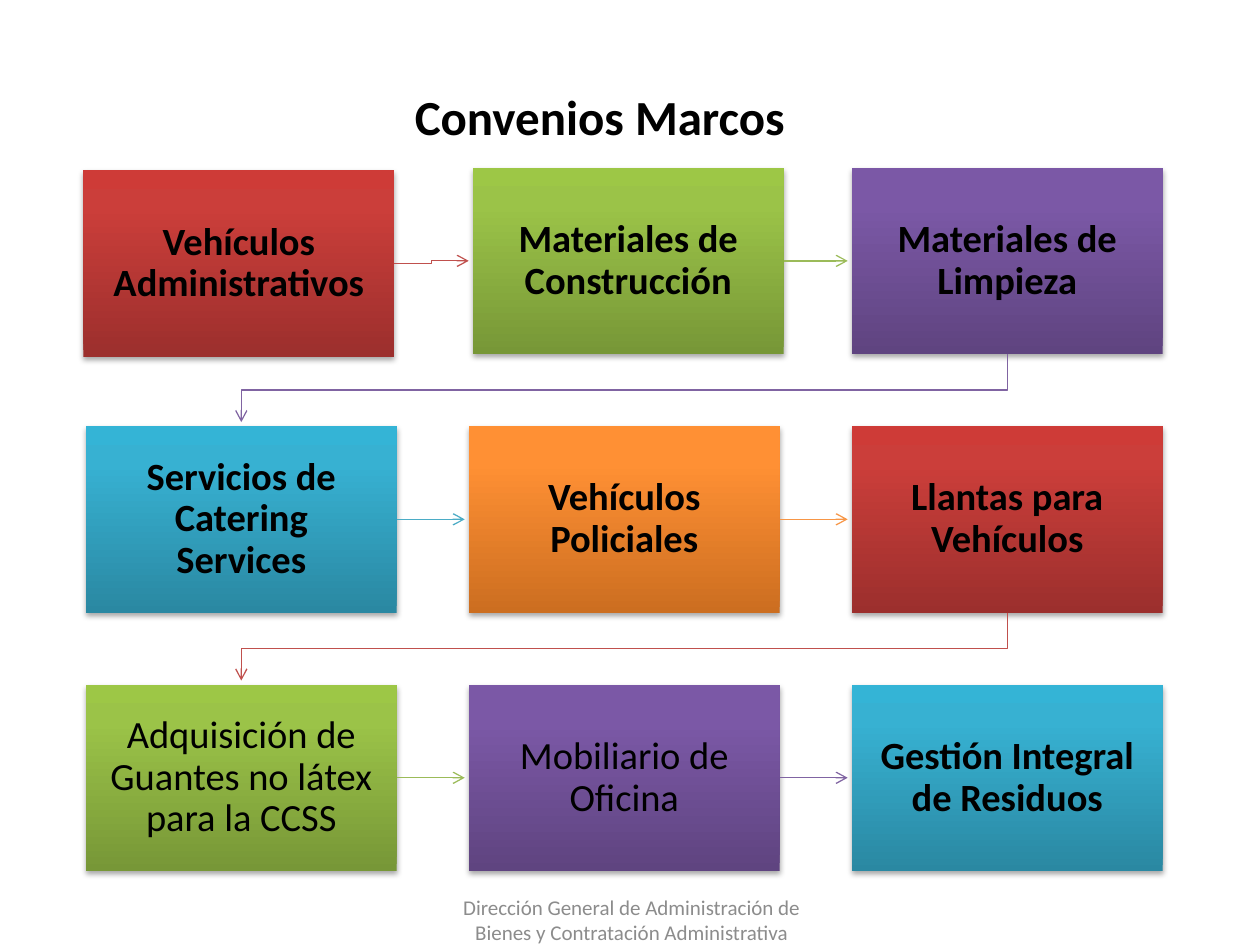
from dataclasses import dataclass

from lxml import etree
from pptx import Presentation
from pptx.dml.color import RGBColor
from pptx.enum.shapes import MSO_CONNECTOR, MSO_SHAPE
from pptx.enum.text import MSO_ANCHOR, PP_ALIGN
from pptx.oxml.ns import qn
from pptx.util import Cm, Pt

RECT = MSO_SHAPE.RECTANGLE
ELBOW = MSO_CONNECTOR.ELBOW
MIDDLE = MSO_ANCHOR.MIDDLE
CENTER = PP_ALIGN.CENTER


@dataclass(frozen=True)
class Theme:
    font: str = "Calibri"
    title_size: int = 28
    box_size: int = 22
    footer_size: int = 12
    line_width: float = 0.75
    text: str = "000000"
    footer: str = "8C8C8C"
    # Line colour, then gradient stops from bottom to top
    accents: tuple = (
        ("C0504D", ("9C2F2D", "CB3E3A", "CE3B37")),
        ("9BBB59", ("779737", "9BC348", "9DC746")),
        ("8064A2", ("5F4480", "7B58A6", "7C57A8")),
        ("4BACC6", ("2A88A2", "37B1D2", "34B4D6")),
        ("F79646", ("CC6E20", "FF9034", "FF9136")),
    )
    stops: tuple = (0, 80, 100)


def add_xml(parent, tag, **attrs):
    return etree.SubElement(parent, qn(tag), attrs)


class SlideBuilder:
    def __init__(self, slide, theme):
        self.slide = slide
        self.theme = theme

    def set_text(self, shape, text, size, color, bold=False, inset_x=0.25, inset_y=0.0):
        tf = shape.text_frame
        tf.text = text
        tf.word_wrap = True
        tf.vertical_anchor = MIDDLE
        tf.margin_left = tf.margin_right = Cm(inset_x)
        tf.margin_top = tf.margin_bottom = Cm(inset_y)
        p = tf.paragraphs[0]
        p.alignment = CENTER
        font = p.runs[0].font
        font.name = self.theme.font
        font.size = Pt(size)
        font.bold = bold
        font.color.rgb = RGBColor.from_string(color)
        return p

    def title(self, text, x, y, w, h):
        s = self.slide.shapes.title
        s.left, s.top, s.width, s.height = Cm(x), Cm(y), Cm(w), Cm(h)
        self.set_text(s, text, self.theme.title_size, self.theme.text, bold=True)

    def footer(self, text, x, y, w, h):
        s = self.slide.shapes.add_textbox(Cm(x), Cm(y), Cm(w), Cm(h))
        self.set_text(s, text, self.theme.footer_size, self.theme.footer)

    def box(self, text, x, y, w, h, stops, bold):
        s = self.slide.shapes.add_shape(RECT, Cm(x), Cm(y), Cm(w), Cm(h))
        sp_pr = s.element.spPr
        grad = add_xml(sp_pr, "a:gradFill", rotWithShape="1")
        stop_list = add_xml(grad, "a:gsLst")
        for position, color in zip(self.theme.stops, stops):
            stop = add_xml(stop_list, "a:gs", pos=str(position * 1000))
            add_xml(stop, "a:srgbClr", val=color)
        add_xml(grad, "a:lin", ang="16200000", scaled="0")
        s.line.fill.background()

        # Soft shadow below the box
        s.shadow.inherit = False
        shadow = add_xml(sp_pr.find(qn("a:effectLst")), "a:outerShdw", blurRad="40000",
                         dist="23000", dir="5400000", rotWithShape="0")
        add_xml(add_xml(shadow, "a:srgbClr", val="000000"), "a:alpha", val="35000")

        p = self.set_text(s, text, self.theme.box_size, self.theme.text, bold, 0.43, 0.43)
        p.line_spacing = 0.9
        return s

    def style_arrow(self, s, color):
        s.line.color.rgb = RGBColor.from_string(color)
        s.line.width = Pt(self.theme.line_width)
        add_xml(s.element.spPr.find(qn("a:ln")), "a:tailEnd", type="arrow")

    def arrow_across(self, start, end, gap, color):
        s = self.slide.shapes.add_connector(
            ELBOW, start.left + start.width, start.top + start.height // 2,
            end.left - gap, end.top + end.height // 2)
        self.style_arrow(s, color)
        add_xml(s.element.spPr, "a:effectLst")

    def arrow_to_next_row(self, start, end, gap, color):
        x1, x2 = (b.left + b.width // 2 for b in (start, end))
        bottom = start.top + start.height
        middle = (bottom + end.top) // 2
        builder = self.slide.shapes.build_freeform(x1, bottom)
        builder.add_line_segments([(x1, middle), (x2, middle), (x2, end.top - gap)],
                                  close=False)
        s = builder.convert_to_shape()
        s.fill.background()
        s.shadow.inherit = False
        self.style_arrow(s, color)


# Box grid in centimetres
COLUMNS = 3
LEFT, TOP = 1.73, 3.38
STEP_X, STEP_Y = 7.72, 5.21
BOX_W, BOX_H = 6.27, 3.76
ARROW_GAP = Cm(0.08)

# Text, bold, offset from the grid
AGREEMENTS = [
    ("Vehículos Administrativos", True, (-0.05, 0.05)),
    ("Materiales de Construcción", True, (0.08, 0)),
    ("Materiales de Limpieza", True, (0, 0)),
    ("Servicios de Catering Services", True, (0, 0)),
    ("Vehículos Policiales", True, (0, 0)),
    ("Llantas para Vehículos", True, (0, 0)),
    ("Adquisición de Guantes no látex para la CCSS", False, (0, 0)),
    ("Mobiliario de Oficina", False, (0, 0)),
    ("Gestión Integral de Residuos", True, (0, 0)),
]


def main():
    prs = Presentation()
    prs.slide_width, prs.slide_height = Cm(25.4), Cm(19.05)
    theme = Theme()
    page = SlideBuilder(prs.slides.add_slide(prs.slide_layouts[5]), theme)

    # Title and footer
    page.title("Convenios Marcos", 0.89, 1.52, 22.4, 1.63)
    page.footer("Dirección General de Administración de Bienes y Contratación Administrativa",
                8.71, 18.03, 8.05, 1.02)

    # Agreements, row by row
    boxes = []
    for i, (text, bold, (dx, dy)) in enumerate(AGREEMENTS):
        row, column = divmod(i, COLUMNS)
        stops = theme.accents[i % len(theme.accents)][1]
        boxes.append(page.box(text, LEFT + column * STEP_X + dx, TOP + row * STEP_Y + dy,
                              BOX_W, BOX_H, stops, bold))

    # Arrows from each box to the next
    for i, (start, end) in enumerate(zip(boxes, boxes[1:])):
        color = theme.accents[i % len(theme.accents)][0]
        row_ends = i % COLUMNS == COLUMNS - 1
        draw = page.arrow_to_next_row if row_ends else page.arrow_across
        draw(start, end, ARROW_GAP, color)

    prs.save("out.pptx")


if __name__ == "__main__":
    main()
